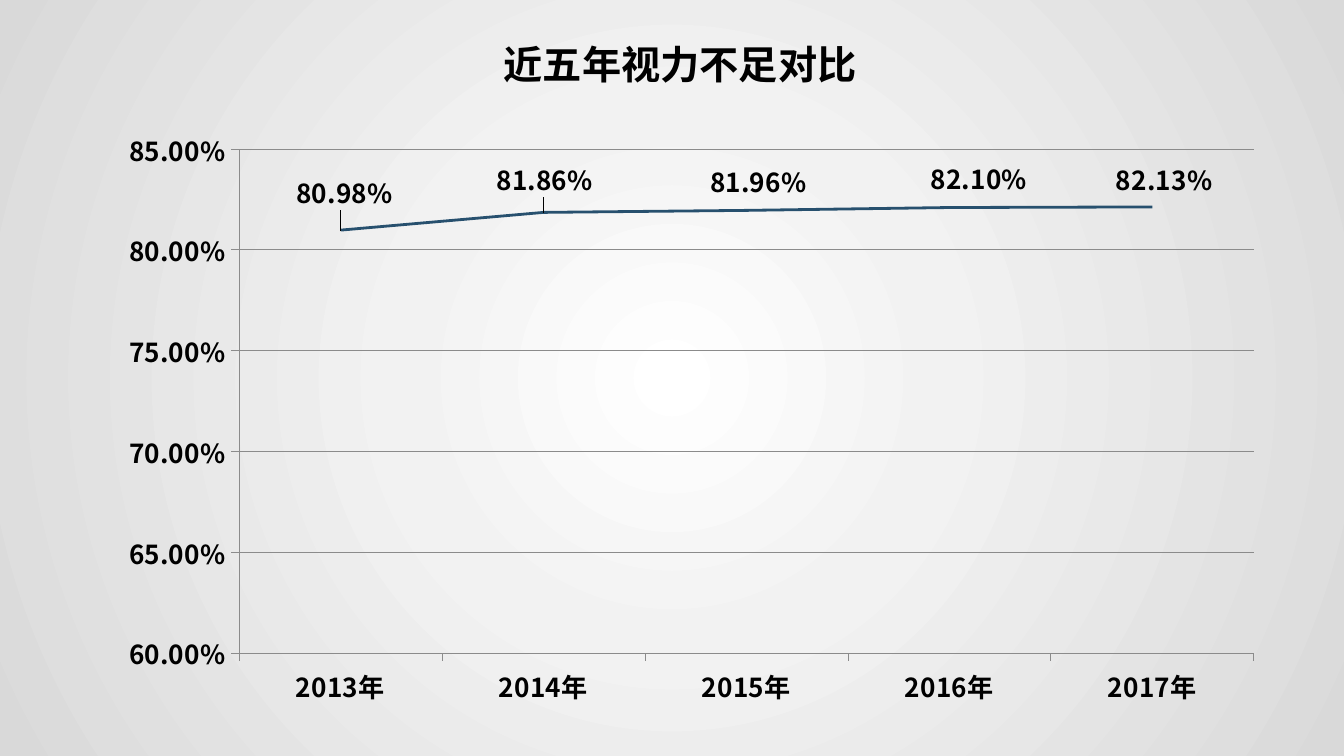
from lxml import etree
from pptx import Presentation
from pptx.chart.data import CategoryChartData
from pptx.dml.color import RGBColor
from pptx.enum.chart import XL_CHART_TYPE, XL_LABEL_POSITION, XL_MARKER_STYLE, XL_TICK_MARK
from pptx.enum.text import MSO_ANCHOR, PP_ALIGN
from pptx.oxml import parse_xml
from pptx.oxml.ns import nsdecls, qn
from pptx.util import Inches, Pt

LINE = XL_CHART_TYPE.LINE
ABOVE = XL_LABEL_POSITION.ABOVE
PLAIN = XL_MARKER_STYLE.NONE
OUT = XL_TICK_MARK.OUTSIDE
NONE = XL_TICK_MARK.NONE
TOP = MSO_ANCHOR.TOP
CENTER = PP_ALIGN.CENTER

FONT = "Noto Sans CJK SC"
BLACK, GRAY, BLUE = "000000", "8B8B8B", "27506E"
PERCENT = "0.00%"
WIDE, HIGH = 8.71, 4.44
STOPS = [(0, "FFFFFF"), (35, "F2F2F2"), (100, "D9D9D9")]
RATES = {
    "2013年": 0.8098,
    "2014年": 0.8186,
    "2015年": 0.8196,
    "2016年": 0.821,
    "2017年": 0.8213,
}
SHIFTS = [(0.03, -0.11), (0.01, -0.07), (0.09, -0.04), (0.22, -0.04), (0.09, -0.03)]


def color(code):
    """Turn a hex string into a colour."""
    return RGBColor.from_string(code)


def set_font(font, size):
    """Apply the bold black slide font."""
    font.name, font.size, font.bold = FONT, Pt(size), True
    font.color.rgb = color(BLACK)


def set_asian(props):
    """Use the slide font for Chinese letters in run properties."""
    asian = etree.Element(qn("a:ea"), typeface=FONT)
    props.find(qn("a:latin")).addnext(asian)


def paint_back(slide):
    """Fill the background with a round gradient."""
    fill = slide.background.fill
    fill.gradient()
    stops = "".join(
        f'<a:gs pos="{pos * 1000}"><a:srgbClr val="{code}"/></a:gs>' for pos, code in STOPS
    )
    grad = parse_xml(
        f'<a:gradFill {nsdecls("a")} rotWithShape="1"><a:gsLst>{stops}</a:gsLst>'
        '<a:path path="circle"><a:fillToRect l="50000" t="50000" r="50000" b="50000"/>'
        "</a:path></a:gradFill>"
    )
    old = next(slide.background._cSld.iter(qn("a:gradFill")))
    old.getparent().replace(old, grad)


def add_title(slide, text):
    """Add the centred heading."""
    box = slide.shapes.add_textbox(Inches(0.62), Inches(0.29), Inches(8.88), Inches(5.16))
    frame = box.text_frame
    frame.word_wrap = True
    frame.vertical_anchor = TOP
    para = frame.paragraphs[0]
    para.alignment, para.line_spacing, para.space_before = CENTER, 0.9, Pt(7.5)
    props = para._p.get_or_add_pPr()
    props.set("marL", str(Inches(0.19)))
    props.set("indent", str(Inches(-0.19)))
    run = para.add_run()
    run.text = text
    set_font(run.font, 21)
    set_asian(run._r.rPr)


def set_line(line, code, width):
    """Give a line its colour and width."""
    line.color.rgb = color(code)
    line.width = Pt(width)


def style_axes(chart):
    """Set scale, ticks, grid and axis lines."""
    for axis in (chart.category_axis, chart.value_axis):
        axis.major_tick_mark, axis.minor_tick_mark = OUT, NONE
        set_line(axis.format.line, GRAY, 0.5)
    axis = chart.value_axis
    axis.minimum_scale, axis.maximum_scale, axis.major_unit = 0.6, 0.85, 0.05
    axis.tick_labels.number_format = PERCENT
    axis.tick_labels.number_format_is_linked = False
    set_line(axis.major_gridlines.format.line, GRAY, 0.5)


def make_layout(marks, left, top, size=()):
    """Build a chart layout from lengths in inches."""
    spans = (WIDE, HIGH, WIDE, HIGH)
    parts = "".join(
        f'<c:{name} val="{length / span:.4f}"/>'
        for name, length, span in zip("xywh", (left, top, *size), spans)
    )
    return parse_xml(
        f'<c:layout {nsdecls("c")}><c:manualLayout>{marks}{parts}</c:manualLayout></c:layout>'
    )


def style_series(series):
    """Draw a plain line with shifted value labels above it."""
    series.smooth = False
    series.marker.style = PLAIN
    set_line(series.format.line, BLUE, 1.5)
    labels = series.data_labels
    labels.show_value = True
    labels.position = ABOVE
    labels.number_format, labels.number_format_is_linked = PERCENT, False
    set_font(labels.font, 14)
    for index, shift in enumerate(SHIFTS):
        label = series.points[index].data_label
        set_font(label.font, 14)
        label.position = ABOVE
    for node, shift in zip(labels._element.findall(qn("c:dLbl")), SHIFTS):
        node.find(qn("c:idx")).addnext(make_layout("", *shift))


def place_plot(chart):
    """Fix the inner plot area within the chart."""
    marks = '<c:layoutTarget val="inner"/><c:xMode val="edge"/><c:yMode val="edge"/>'
    area = chart._chartSpace.chart.plotArea
    for old in area.findall(qn("c:layout")):
        area.remove(old)
    area.insert(0, make_layout(marks, 0.99, 0.23, (7.55, 3.75)))


def add_rates(slide):
    """Add the line chart of yearly rates."""
    data = CategoryChartData(number_format=PERCENT)
    data.categories = list(RATES)
    data.add_series("Series 1", list(RATES.values()))
    chart = slide.shapes.add_chart(
        LINE, Inches(0.79), Inches(0.88), Inches(WIDE), Inches(HIGH), data
    ).chart
    chart.has_legend = chart.has_title = False
    set_font(chart.font, 14)
    plot = chart.plots[0]
    plot.vary_by_categories = False
    style_axes(chart)
    style_series(plot.series[0])
    place_plot(chart)
    for latin in list(chart._chartSpace.iter(qn("a:latin"))):
        set_asian(latin.getparent())


def main():
    """Build and save the slide."""
    deck = Presentation()
    deck.slide_width = Inches(10)
    deck.slide_height = deck.slide_width * 9 // 16
    slide = deck.slides.add_slide(deck.slide_layouts[6])
    paint_back(slide)
    add_title(slide, "近五年视力不足对比")
    add_rates(slide)
    deck.save("out.pptx")


if __name__ == "__main__":
    main()
